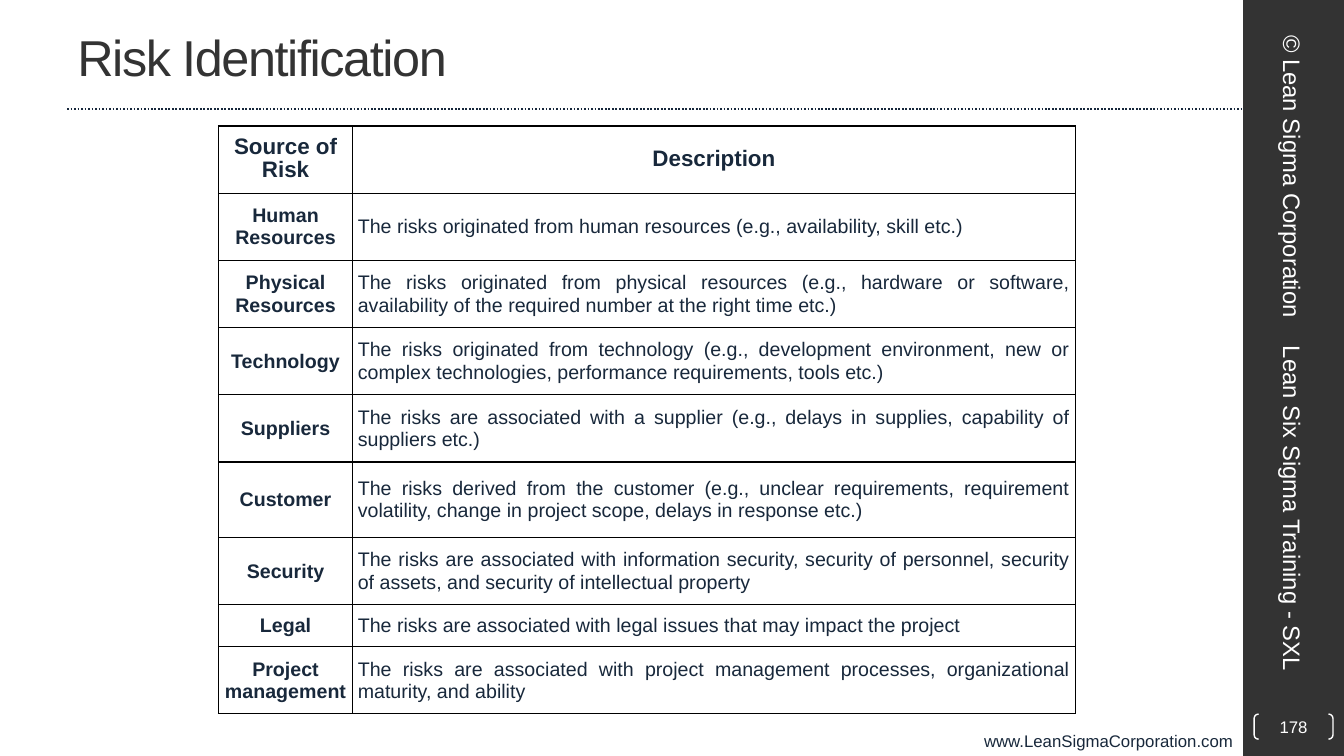
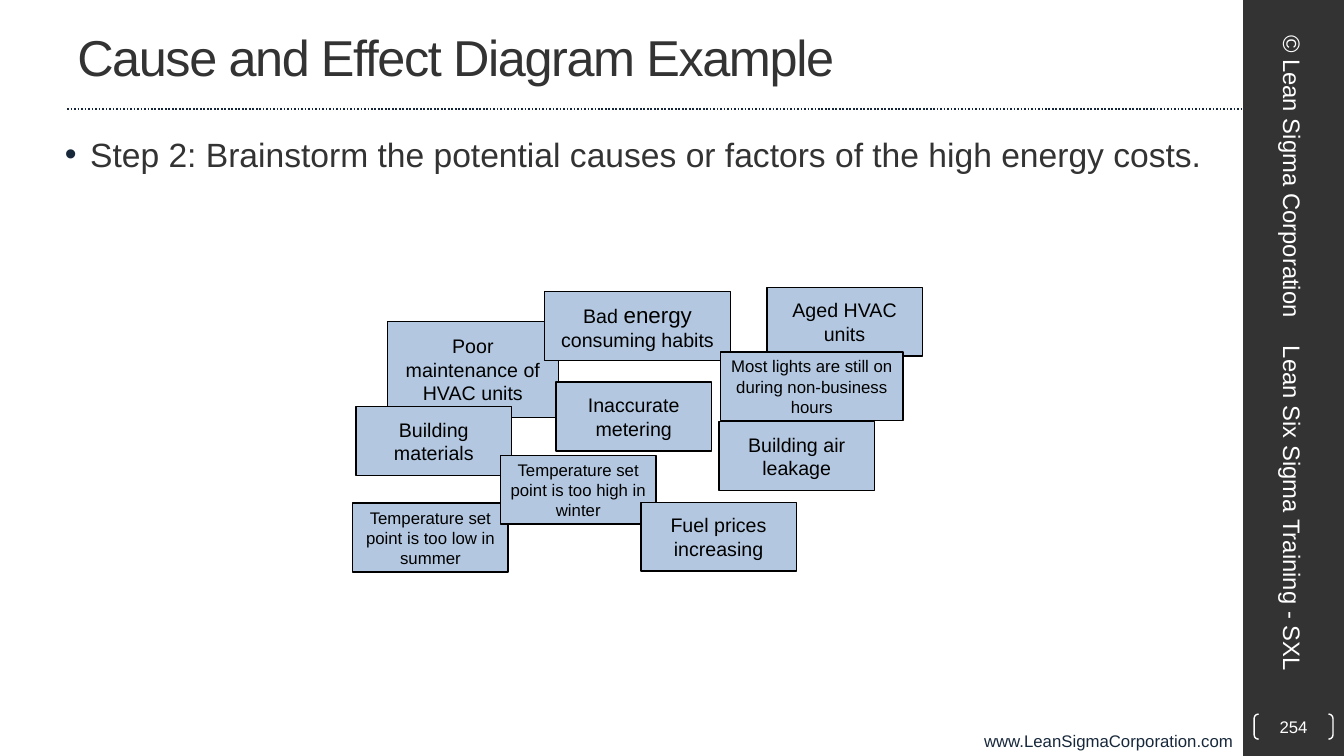
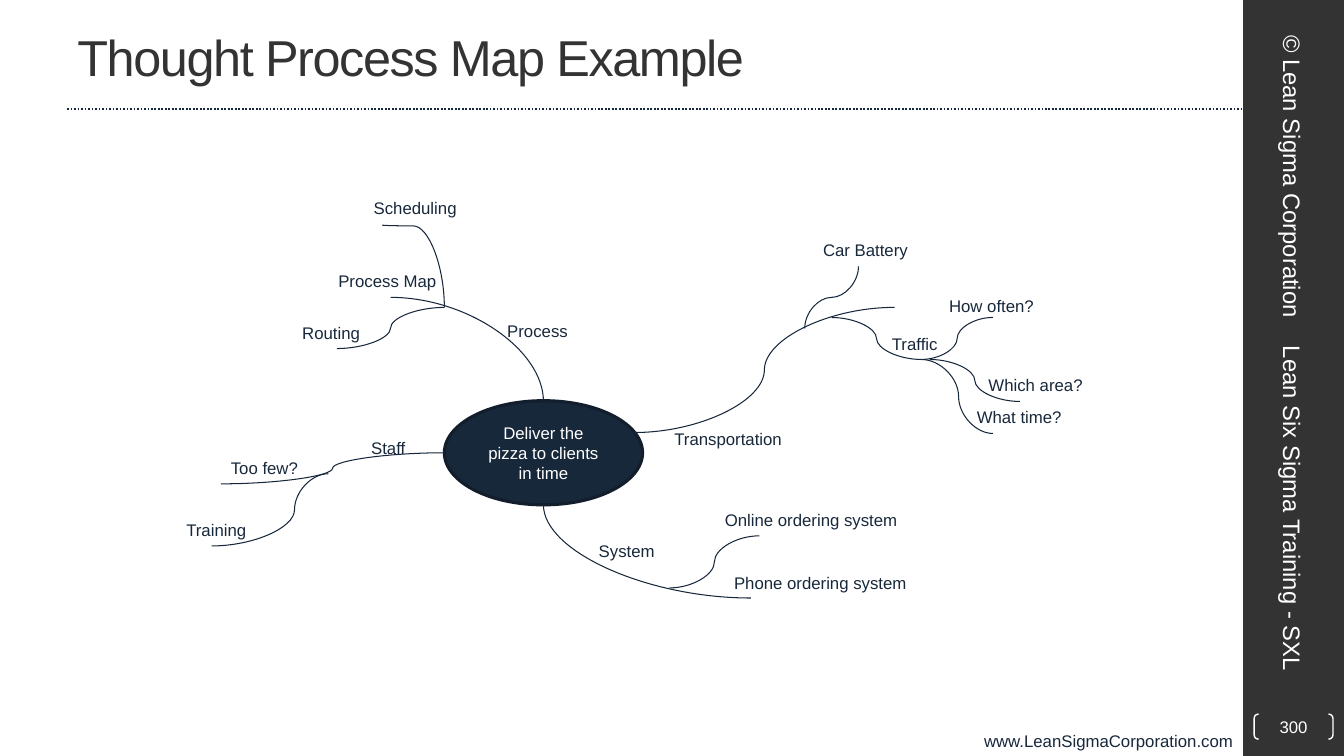
from dataclasses import dataclass

from lxml import etree
from pptx import Presentation
from pptx.dml.color import RGBColor
from pptx.enum.dml import MSO_LINE
from pptx.enum.shapes import MSO_CONNECTOR, MSO_SHAPE
from pptx.enum.text import MSO_ANCHOR, MSO_AUTO_SIZE, PP_ALIGN
from pptx.oxml.ns import qn
from pptx.util import Emu, Inches, Pt

LEFT, CENTER, RIGHT, JUSTIFY = PP_ALIGN.LEFT, PP_ALIGN.CENTER, PP_ALIGN.RIGHT, PP_ALIGN.JUSTIFY
TOP, MIDDLE = MSO_ANCHOR.TOP, MSO_ANCHOR.MIDDLE
STRAIGHT, CURVE = MSO_CONNECTOR.STRAIGHT, MSO_CONNECTOR.CURVE
RECTANGLE, OVAL, BRACKETS = MSO_SHAPE.RECTANGLE, MSO_SHAPE.OVAL, MSO_SHAPE.DOUBLE_BRACKET
DOTTED = MSO_LINE.ROUND_DOT
FIT_SHAPE = MSO_AUTO_SIZE.SHAPE_TO_FIT_TEXT
TITLE_ONLY = 5
COLUMNS, ROWS = 160, 90
BAND_LEFT = 148
GRID_CELL = Inches(1) // 12


@dataclass(frozen=True)
class Theme:
    """Colours, font and type sizes shared by the slides."""
    font: str = "Arial"
    ink: str = "18283B"
    rule: str = "17273B"
    charcoal: str = "333333"
    note: str = "B3C8E0"
    hub_edge: str = "121E2C"
    black: str = "000000"
    white: str = "FFFFFF"
    title: int = 36
    body: int = 24
    band: int = 17
    heading: int = 16
    cell: int = 14
    small: int = 12


THEME = Theme()

RISKS = [
    ("Source of Risk", "Description", 8),
    ("Human Resources",
     "The risks originated from human resources (e.g., availability, skill etc.)", 8),
    ("Physical Resources",
     "The risks originated from physical resources (e.g., hardware or software, "
     "availability of the required number at the right time etc.)", 8),
    ("Technology",
     "The risks originated from technology (e.g., development environment, new or "
     "complex technologies, performance requirements, tools etc.)", 8),
    ("Suppliers",
     "The risks are associated with a supplier (e.g., delays in supplies, "
     "capability of suppliers etc.)", 8),
    ("Customer",
     "The risks derived from the customer (e.g., unclear requirements, requirement "
     "volatility, change in project scope, delays in response etc.)", 9),
    ("Security",
     "The risks are associated with information security, security of personnel, "
     "security of assets, and security of intellectual property", 8),
    ("Legal", "The risks are associated with legal issues that may impact the project", 5),
    ("Project management",
     "The risks are associated with project management processes, organizational "
     "maturity, and ability", 8),
]

NOTE_SIZE = (18.5, 8.2)
CAUSES = [
    ((91.3, 34.2, *NOTE_SIZE), [("Aged HVAC units", THEME.cell)]),
    ((46.1, 38.3, 20.4, 11.4), [("Poor maintenance of HVAC units", THEME.cell)]),
    ((64.8, 34.7, 22.2, 8.2), [("Bad ", THEME.cell), ("energy", THEME.heading),
                               (" consuming habits", THEME.cell)]),
    ((66.2, 45.5, *NOTE_SIZE), [("Inaccurate metering", THEME.cell)]),
    ((42.4, 48.4, *NOTE_SIZE), [("Building materials", THEME.cell)]),
    ((42, 59.9, *NOTE_SIZE), [("Temperature set point is too low in summer", THEME.small)]),
    ((59.6, 54.2, *NOTE_SIZE), [("Temperature set point is too high in winter", THEME.small)]),
    ((85.8, 41.9, 21.7, 8.2),
     [("Most lights are still on during non-business hours", THEME.small)]),
    ((85.6, 50.2, *NOTE_SIZE), [("Building air leakage", THEME.cell)]),
    ((76.3, 59.8, *NOTE_SIZE), [("Fuel prices increasing", THEME.cell)]),
]

TRAFFIC_END = (109.7, 42.8)
PROCESS_FORK = (52.9, 36.6)
S_CURVES = [
    ((75.5, 51.5), (106.5, 36.6), 0.5),
    ((52.9, 53.9), (26.3, 57.6), 0.5),
    ((99, 37.8), TRAFFIC_END, 0.5),
    (TRAFFIC_END, (118.2, 51.6), 0.52),
    (TRAFFIC_END, (118.2, 37.8), 0.5),
    ((110.7, 42.8), (121.4, 47.8), 0.5),
    ((39.1, 56.4), (25.2, 65), 0.29),
    ((40.1, 41.5), PROCESS_FORK, 0.5),
    ((79.7, 70), (90.4, 63.8), 0.5),
]
UPRIGHT_CURVES = [
    ((95.8, 39.1), (102.2, 31.7), 0.5),
    (PROCESS_FORK, (45.5, 26.8), 0.99),
]
QUARTER_CURVES = [
    ((89.4, 71.2), (64.7, 60.1)),
    ((46.5, 35.4), (64.7, 47.8)),
]
THOUGHTS = [
    ("Transportation", 79.1, 50.5, 15.4),
    ("Staff", 43, 51.5, 6.6),
    ("System", 70.1, 63.8, 9.1),
    ("Process", 59.2, 37.6, 9.7),
    ("Car Battery", 96.8, 28, 12.6),
    ("Traffic", 105, 39.1, 7.9),
    ("How often?", 111.8, 34.6, 12.6),
    ("Which area?", 116.5, 44, 13.7),
    ("What time?", 115.1, 47.8, 12.6),
    ("Training", 21, 61.3, 9.6),
    ("Too few?", 26.3, 53.9, 10.4),
    ("Scheduling", 43.3, 23, 12.4),
    ("Routing", 34.8, 37.8, 9.4),
    ("Process Map", 39.1, 31.7, 14.2),
    ("Online ordering system", 85.1, 60.1, 23.2),
    ("Phone ordering system", 86.2, 67.6, 23.2),
]


def grid(*cells):
    """Turn counts of grid cells into lengths."""
    return [Emu(round(count * GRID_CELL)) for count in cells]


def colour(value):
    """Return a theme colour as an RGB colour."""
    return RGBColor.from_string(value)


def write(frame, runs, ink, align=LEFT, anchor=TOP, bold=False):
    """Fill the first paragraph of a frame with (text, size) runs."""
    frame.word_wrap = True
    frame.vertical_anchor = anchor
    paragraph = frame.paragraphs[0]
    paragraph.alignment = align
    for text, size in runs:
        run = paragraph.add_run()
        run.text = text
        run.font.name = THEME.font
        run.font.size = Pt(size)
        run.font.bold = bold
        run.font.color.rgb = colour(ink)
    return paragraph


def add_text(slide, box, text, size, ink, align=LEFT, anchor=TOP):
    """Add a text box on the grid."""
    shape = slide.shapes.add_textbox(*grid(*box))
    write(shape.text_frame, [(text, size)], ink, align, anchor)
    return shape


def add_block(slide, kind, box, fill=None, edge=None, width=1):
    """Add a preset shape on the grid."""
    shape = slide.shapes.add_shape(kind, *grid(*box))
    shape.shadow.inherit = False
    if fill:
        shape.fill.solid()
        shape.fill.fore_color.rgb = colour(fill)
    else:
        shape.fill.background()
    if edge:
        shape.line.color.rgb = colour(edge)
        shape.line.width = Pt(width)
    else:
        shape.line.fill.background()
    return shape


def add_line(slide, kind, start, end, width):
    """Add a connector without shadow."""
    connector = slide.shapes.add_connector(kind, *grid(*start, *end))
    connector.line.color.rgb = colour(THEME.rule)
    connector.line.width = Pt(width)
    etree.SubElement(connector.element.spPr, qn("a:effectLst"))
    return connector


def add_s_curve(slide, start, end, bend):
    """Add a curve that leaves and arrives horizontally."""
    connector = add_line(slide, CURVE, start, end, 0.75)
    adjustments = connector.element.spPr.find(qn("a:prstGeom")).get_or_add_avLst()
    etree.SubElement(adjustments, qn("a:gd"), name="adj1", fmla=f"val {round(bend * 100000)}")
    return connector


def add_upright_curve(slide, start, end, bend):
    """Add a curve that leaves and arrives vertically, as a turned S curve."""
    middle_x, middle_y = (start[0] + end[0]) / 2, (start[1] + end[1]) / 2
    half_x, half_y = (start[1] - end[1]) / 2, (end[0] - start[0]) / 2
    connector = add_s_curve(slide, (middle_x - half_x, middle_y - half_y),
                            (middle_x + half_x, middle_y + half_y), bend)
    connector.element.spPr.find(qn("a:xfrm")).set("rot", str(270 * 60000))


def add_quarter_curve(slide, start, end):
    """Add a curve that leaves horizontally and arrives vertically."""
    connector = add_line(slide, CURVE, start, end, 0.75)
    connector.element.spPr.find(qn("a:prstGeom")).set("prst", "curvedConnector2")


def add_label(slide, text, left, top, width):
    """Add a one-line label that fits its text."""
    frame = add_text(slide, (left, top, width, 3.6), text, THEME.small, THEME.ink).text_frame
    frame.word_wrap = False
    frame.auto_size = FIT_SHAPE


def add_bullet(slide, box, text):
    """Add a bulleted statement."""
    paragraph = add_text(slide, box, text, THEME.body, THEME.charcoal).text_frame.paragraphs[0]
    properties = paragraph._p.get_or_add_pPr()
    properties.set("marL", str(Inches(0.38)))
    properties.set("indent", str(Inches(-0.25)))
    bullet_colour = etree.SubElement(properties, qn("a:buClr"))
    etree.SubElement(bullet_colour, qn("a:srgbClr"), val=THEME.ink)
    etree.SubElement(properties, qn("a:buFont"), typeface=THEME.font)
    etree.SubElement(properties, qn("a:buChar"), char="•")


def format_cell(cell, text, size, align, bold):
    """Write a table cell and give it thin borders and no fill."""
    cell.margin_left = cell.margin_right = Inches(0.05)
    cell.margin_top = cell.margin_bottom = 0
    cell.vertical_anchor = MIDDLE
    paragraph = write(cell.text_frame, [(text, size)], THEME.ink, align, MIDDLE, bold)
    paragraph.line_spacing = Pt(16)
    properties = cell._tc.get_or_add_tcPr()
    for side in ("a:lnL", "a:lnR", "a:lnT", "a:lnB"):
        border = etree.SubElement(properties, qn(side), w=str(Pt(1)))
        fill = etree.SubElement(border, qn("a:solidFill"))
        etree.SubElement(fill, qn("a:srgbClr"), val=THEME.black)
    cell.fill.background()


def add_risk_table(slide, left, top, widths, rows):
    """Add the table of risk sources under a heading row."""
    height = sum(row[-1] for row in rows)
    table = slide.shapes.add_table(len(rows), len(widths),
                                   *grid(left, top, sum(widths), height)).table
    table.first_row = table.horz_banding = False
    for column, width in zip(table.columns, grid(*widths)):
        column.width = width
    for index, (source, description, row_height) in enumerate(rows):
        heading = index == 0
        size = THEME.heading if heading else THEME.cell
        table.rows[index].height = grid(row_height)[0]
        format_cell(table.cell(index, 0), source, size, CENTER, True)
        format_cell(table.cell(index, 1), description, size,
                    CENTER if heading else JUSTIFY, heading)


def add_page(presentation, title, number):
    """Add a slide with title, rule, side band, address and page number."""
    slide = presentation.slides.add_slide(presentation.slide_layouts[TITLE_ONLY])
    add_block(slide, RECTANGLE, (BAND_LEFT, 0, COLUMNS - BAND_LEFT, ROWS), THEME.charcoal)
    add_text(slide, (0, 86.4, BAND_LEFT, 3.6), "www.LeanSigmaCorporation.com",
             THEME.small, THEME.ink, RIGHT)
    add_line(slide, STRAIGHT, (8, 13), (BAND_LEFT, 13), 1.25).line.dash_style = DOTTED

    heading = slide.shapes.title
    heading.left, heading.top, heading.width, heading.height = grid(8, 0.4, 133.3, 12.6)
    paragraph = write(heading.text_frame, [(title, THEME.title)], THEME.charcoal, LEFT, MIDDLE)
    paragraph.runs[0].font._element.set("spc", "-100")

    brackets = add_block(slide, BRACKETS, (149.3, 85, 9.4, 3), edge=THEME.white)
    brackets.adjustments[0] = 0.18
    frame = brackets.text_frame
    frame.margin_left = frame.margin_right = frame.margin_top = frame.margin_bottom = 0
    write(frame, [(str(number), THEME.small)], THEME.white, CENTER, MIDDLE)

    for text, box, align in (
        ("© Lean Sigma Corporation", (134.9, 17.8, 38, 6.4), CENTER),
        ("Lean Six Sigma Training - SXL", (131.9, 58.8, 44, 6.4), LEFT),
    ):
        add_text(slide, box, text, THEME.band, THEME.white, align, MIDDLE).rotation = 90
    return slide


def add_cause_notes(slide):
    """Add the overlapping notes of the brainstorm."""
    for box, runs in CAUSES:
        note = add_block(slide, RECTANGLE, box, THEME.note, THEME.black)
        note.text_frame.margin_left = note.text_frame.margin_right = Inches(0.09)
        write(note.text_frame, runs, THEME.black, CENTER, MIDDLE)


def add_thought_map(slide):
    """Add the central goal, its branches and their labels."""
    goal = add_block(slide, OVAL, (52.9, 47.7, 23.6, 12.4), THEME.ink, THEME.hub_edge, 2.25)
    write(goal.text_frame, [("Deliver the pizza to clients in time", THEME.small)],
          THEME.white, CENTER, MIDDLE)
    for curve in S_CURVES:
        add_s_curve(slide, *curve)
    for curve in UPRIGHT_CURVES:
        add_upright_curve(slide, *curve)
    for curve in QUARTER_CURVES:
        add_quarter_curve(slide, *curve)
    for thought in THOUGHTS:
        add_label(slide, *thought)


def main():
    """Build and save the presentation."""
    presentation = Presentation()
    presentation.slide_width, presentation.slide_height = grid(COLUMNS, ROWS)

    add_risk_table(add_page(presentation, "Risk Identification", 178), 26, 15, (16, 86), RISKS)

    brainstorm = add_page(presentation, "Cause and Effect Diagram Example", 254)
    add_bullet(brainstorm, (5, 15.3, 141.4, 6),
               "Step 2: Brainstorm the potential causes or factors of the high energy costs.")
    add_cause_notes(brainstorm)

    add_thought_map(add_page(presentation, "Thought Process Map Example", 300))
    presentation.save("out.pptx")


if __name__ == "__main__":
    main()
